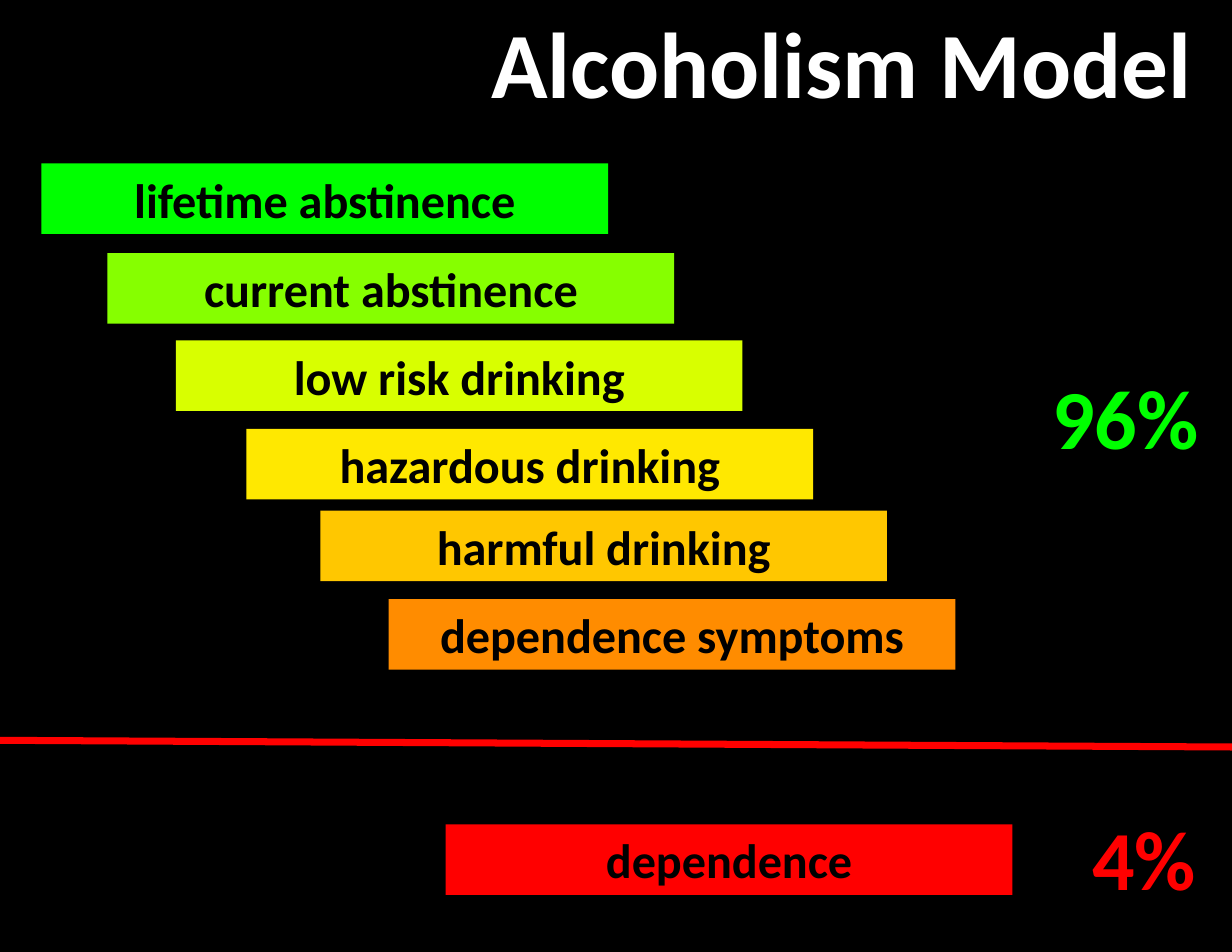
import pptx
import pptx.util
import pptx.dml.color
import pptx.enum.shapes
import pptx.enum.text
import lxml.etree

Inches = pptx.util.Inches
Color = pptx.dml.color.RGBColor
Align = pptx.enum.text.PP_ALIGN
Anchor = pptx.enum.text.MSO_ANCHOR

BLACK = Color(0x00, 0x00, 0x00)
WHITE = Color(0xFF, 0xFF, 0xFF)
GREEN = Color(0x00, 0xFF, 0x00)
LIME = Color(0x86, 0xFF, 0x00)
CITRON = Color(0xD8, 0xFF, 0x00)
YELLOW = Color(0xFF, 0xE8, 0x00)
AMBER = Color(0xFF, 0xC7, 0x00)
ORANGE = Color(0xFF, 0x8C, 0x00)
RED = Color(0xFF, 0x00, 0x00)


def write(shape, text, size, color, align=Align.CENTER, anchor=Anchor.TOP,
          wrap=True, side=0.11, edge=0.06):
    frame = shape.text_frame
    frame.auto_size = pptx.enum.text.MSO_AUTO_SIZE.NONE
    frame.word_wrap = wrap
    frame.vertical_anchor = anchor
    frame.margin_left = frame.margin_right = Inches(side)
    frame.margin_top = frame.margin_bottom = Inches(edge)
    par = frame.paragraphs[0]
    par.alignment = align
    run = par.add_run()
    run.text = text
    run.font.name = "Calibri"
    run.font.size = pptx.util.Pt(size)
    run.font.bold = True
    run.font.color.rgb = color


deck = pptx.Presentation()
deck.slide_width = Inches(11)
deck.slide_height = Inches(8.5)
slide = deck.slides.add_slide(deck.slide_layouts[5])
slide.background.fill.solid()
slide.background.fill.fore_color.rgb = BLACK

title = slide.shapes.title
title.left, title.top = Inches(4.16), Inches(0)
title.width, title.height = Inches(6.71), Inches(1.11)
write(title, "Alcoholism Model", 60, WHITE, wrap=False, side=0.1, edge=0.05)

# Dividing line between the drinking stages and dependence
line = slide.shapes.add_connector(
    pptx.enum.shapes.MSO_CONNECTOR.STRAIGHT,
    Inches(0), Inches(6.61), Inches(11), Inches(6.67))
line.line.color.rgb = RED
line.line.width = pptx.util.Pt(4.5)
lxml.etree.SubElement(line._element.spPr, pptx.oxml.ns.qn("a:effectLst"))

stages = [
    ("lifetime abstinence", 0.37, 1.46, GREEN),
    ("current abstinence", 0.96, 2.26, LIME),
    ("low risk drinking", 1.57, 3.04, CITRON),
    ("hazardous drinking", 2.2, 3.83, YELLOW),
    ("harmful drinking", 2.86, 4.56, AMBER),
    ("dependence symptoms", 3.47, 5.35, ORANGE),
    ("dependence", 3.98, 7.36, RED),
]
for text, left, top, color in stages:
    bar = slide.shapes.add_shape(
        pptx.enum.shapes.MSO_SHAPE.RECTANGLE,
        Inches(left), Inches(top), Inches(5.06), Inches(0.63))
    bar.shadow.inherit = False
    bar.fill.solid()
    bar.fill.fore_color.rgb = color
    bar.line.fill.background()
    write(bar, text, 31, BLACK, anchor=Anchor.MIDDLE)

shares = [("96%", 9.1, 3.2, GREEN), ("4%", 9.08, 7.14, RED)]
for text, left, top, color in shares:
    box = slide.shapes.add_textbox(
        Inches(left), Inches(top), Inches(1.71), Inches(1.02))
    write(box, text, 54, color, align=Align.RIGHT)

deck.save("out.pptx")
